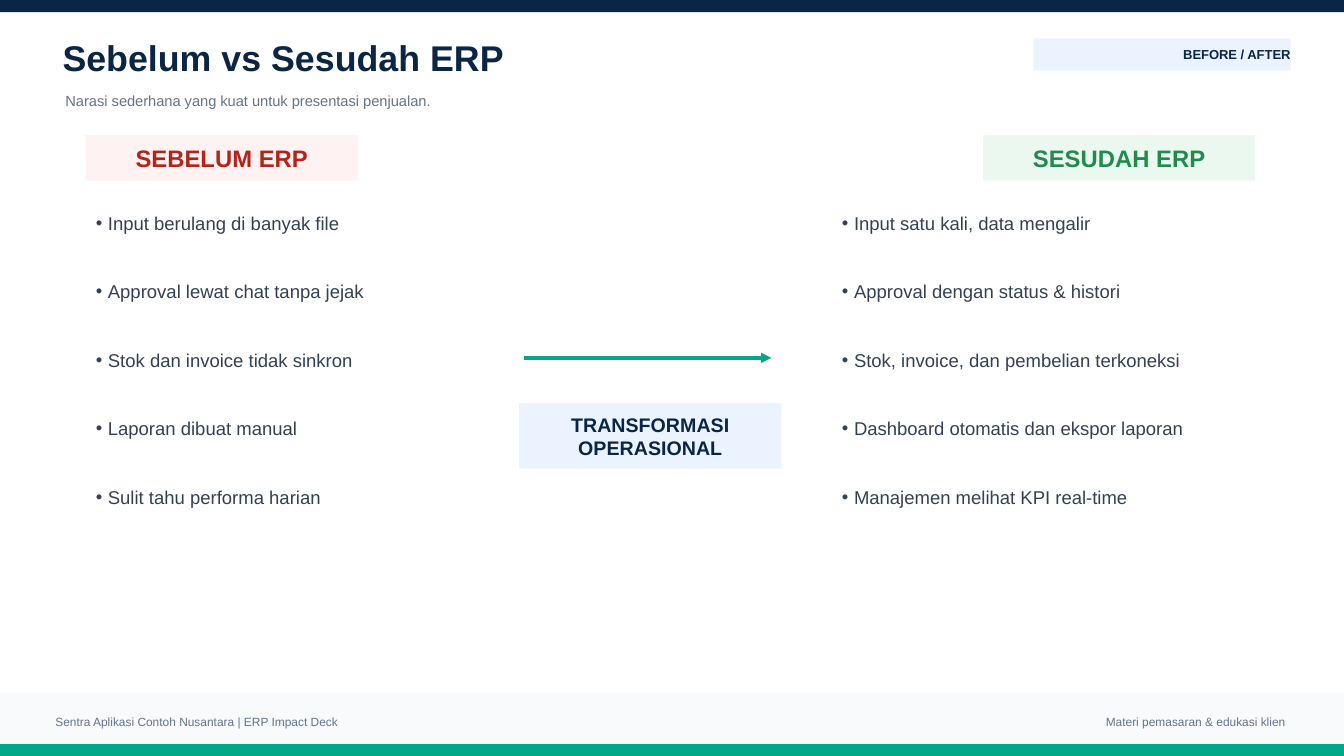
from lxml import etree
from pptx import Presentation
from pptx.dml.color import RGBColor
from pptx.enum.shapes import MSO_CONNECTOR, MSO_SHAPE
from pptx.enum.text import MSO_ANCHOR, MSO_AUTO_SIZE, PP_ALIGN
from pptx.oxml import parse_xml
from pptx.oxml.ns import nsdecls, qn
from pptx.util import Pt

PX = 9144  # EMU per px, 100 px to the inch
WIDTH, HEIGHT = 1333, 750
FONT = "Arial"

NAVY = RGBColor(0x0B, 0x25, 0x45)
GREEN = RGBColor(0x00, 0xA8, 0x87)
PALE_GRAY = RGBColor(0xF8, 0xFA, 0xFC)
PALE_BLUE = RGBColor(0xEA, 0xF3, 0xFF)
PALE_RED = RGBColor(0xFE, 0xF2, 0xF2)
PALE_GREEN = RGBColor(0xEA, 0xF8, 0xF0)
RED = RGBColor(0xB4, 0x23, 0x18)
DARK_GREEN = RGBColor(0x1F, 0x8B, 0x4C)
SLATE = RGBColor(0x64, 0x74, 0x8B)
INK = RGBColor(0x33, 0x41, 0x55)

BEFORE = [
    "Input berulang di banyak file",
    "Approval lewat chat tanpa jejak",
    "Stok dan invoice tidak sinkron",
    "Laporan dibuat manual",
    "Sulit tahu performa harian",
]
AFTER = [
    "Input satu kali, data mengalir",
    "Approval dengan status & histori",
    "Stok, invoice, dan pembelian terkoneksi",
    "Dashboard otomatis dan ekspor laporan",
    "Manajemen melihat KPI real-time",
]


def emu(*lengths):
    return [length * PX for length in lengths]


def place(shape, box):
    shape.left, shape.top, shape.width, shape.height = emu(*box)


def write(shape, lines, size, color, bold=False, align=PP_ALIGN.LEFT, anchor=MSO_ANCHOR.MIDDLE):
    """Fill a shape with one paragraph per line, without insets."""
    frame = shape.text_frame
    frame.word_wrap = True
    frame.auto_size = MSO_AUTO_SIZE.NONE
    frame.vertical_anchor = anchor
    frame.margin_left = frame.margin_top = frame.margin_right = frame.margin_bottom = 0
    for index, line in enumerate(lines):
        paragraph = frame.add_paragraph() if index else frame.paragraphs[0]
        paragraph.alignment = align
        paragraph.space_before = Pt(0)
        run = paragraph.add_run()
        run.text = line
        run.font.name, run.font.size, run.font.bold = FONT, Pt(size), bold
        run.font.color.rgb = color
    return frame.paragraphs


def add_rectangle(slide, box, fill):
    shape = slide.shapes.add_shape(MSO_SHAPE.RECTANGLE, *emu(*box))
    shape.shadow.inherit = False
    shape.fill.solid()
    shape.fill.fore_color.rgb = fill
    shape.line.fill.background()
    return shape


def add_label(slide, box, text, size, align=PP_ALIGN.LEFT):
    write(slide.shapes.add_textbox(*emu(*box)), [text], size, SLATE, align=align)


def add_header(slide, box):
    left, top, width, _ = box
    add_rectangle(slide, (left, top, width, 12), NAVY)
    title = slide.shapes.title
    place(title, (left + 62, top + 36, 940, 42))
    write(title, ["Sebelum vs Sesudah ERP"], 25.5, NAVY, bold=True)
    add_label(slide, (left + 65, top + 86, 1020, 28),
              "Narasi sederhana yang kuat untuk presentasi penjualan.", 10.5)
    tag = add_rectangle(slide, (left + width - 308, top + 38, 255, 32), PALE_BLUE)
    write(tag, ["BEFORE / AFTER"], 9.3, NAVY, bold=True, align=PP_ALIGN.RIGHT)


def add_footer(slide, box):
    left, top, width, height = box
    add_rectangle(slide, (left, top + height - 12, width, 12), GREEN)
    add_rectangle(slide, (left, top, width, height - 12), PALE_GRAY)
    add_label(slide, (left + 55, top + 20, 560, 18),
              "Sentra Aplikasi Contoh Nusantara | ERP Impact Deck", 8.5)
    add_label(slide, (left + width - 488, top + 20, 430, 18),
              "Materi pemasaran & edukasi klien", 8.5, PP_ALIGN.RIGHT)


def add_column(slide, heading_box, heading, fill, color, placeholder, list_box, items):
    banner = add_rectangle(slide, heading_box, fill)
    write(banner, [heading], 17, color, bold=True, align=PP_ALIGN.CENTER)
    place(placeholder, list_box)
    paragraphs = write(placeholder, items, 13.2, INK, anchor=MSO_ANCHOR.TOP)
    for index, paragraph in enumerate(paragraphs):
        properties = paragraph._p.get_or_add_pPr()
        properties.set("marL", str(12 * PX))
        properties.set("indent", str(-12 * PX))
        properties.append(parse_xml(f'<a:buFont {nsdecls("a")} typeface="{FONT}"/>'))
        properties.append(parse_xml(f'<a:buChar {nsdecls("a")} char="•"/>'))
        paragraph.space_after = Pt(0)
        if index:
            paragraph.space_before = Pt(33.07)


def add_transformation(slide, box):
    left, top, width, height = box
    arrow = slide.shapes.add_connector(
        MSO_CONNECTOR.STRAIGHT, *emu(left + 5, top, left + width - 10, top))
    arrow.line.color.rgb = GREEN
    arrow.line.width = Pt(2.4)
    etree.SubElement(arrow.line._get_or_add_ln(), qn("a:tailEnd"), type="triangle")
    etree.SubElement(arrow._element.spPr, qn("a:effectLst"))
    caption = add_rectangle(slide, (left, top + height - 65, width, 65), PALE_BLUE)
    write(caption, ["TRANSFORMASI", "OPERASIONAL"], 14, NAVY, bold=True, align=PP_ALIGN.CENTER)


def main():
    presentation = Presentation()
    presentation.slide_width, presentation.slide_height = emu(WIDTH, HEIGHT)
    slide = presentation.slides.add_slide(presentation.slide_layouts.get_by_name("Two Content"))
    before_list, after_list = list(slide.placeholders)[1:3]

    # Frame of the slide
    add_header(slide, (0, 0, WIDTH, 114))
    add_footer(slide, (0, 687, WIDTH, 63))

    # Comparison and the step between
    add_column(slide, (85, 134, 270, 45), "SEBELUM ERP", PALE_RED, RED,
               before_list, (95, 210, 405, 302), BEFORE)
    add_column(slide, (975, 134, 270, 45), "SESUDAH ERP", PALE_GREEN, DARK_GREEN,
               after_list, (835, 210, 405, 302), AFTER)
    add_transformation(slide, (515, 355, 260, 110))

    presentation.save("out.pptx")


if __name__ == "__main__":
    main()
